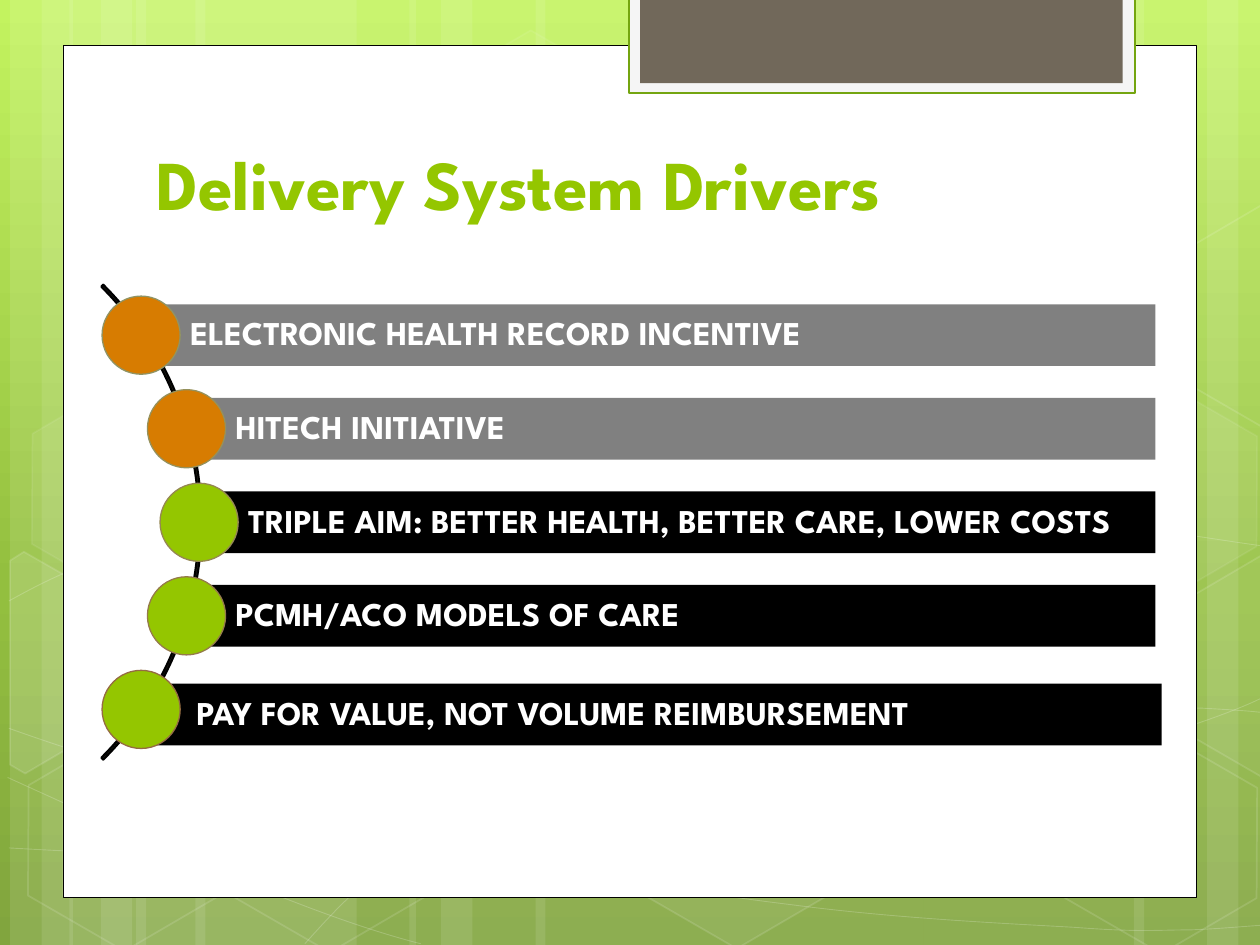
from collections import namedtuple
from copy import deepcopy
from dataclasses import dataclass

from lxml.etree import SubElement
from pptx import Presentation
from pptx.dml.color import RGBColor
from pptx.enum.shapes import MSO_SHAPE as Shape
from pptx.enum.text import MSO_ANCHOR as Anchor, PP_ALIGN as Align
from pptx.oxml.ns import qn
from pptx.util import Inches, Pt

Box = namedtuple("Box", "left top width height")


@dataclass(frozen=True)
class Theme:
    font: str = "League Spartan"
    title_size: int = 40
    label_size: int = 19
    green: str = "94C600"
    orange: str = "D77C01"
    gray: str = "808080"
    black: str = "000000"
    white: str = "FFFFFF"
    arc: str = "3E3D2D"
    tab: str = "71685A"
    tab_frame: str = "F5F5F5"
    tab_line: str = "74A510"
    backdrop: tuple = ((0, "C3F35F"), (0.62, "93BF3F"), (1, "81A53E"))


THEME = Theme()

# Left edge and width of each translucent vertical stripe
STRIPES = [(1.08, 1.75), (0.08, 0.5), (0.33, 0.83), (1.55, 1.75), (0.55, 0.5), (0.8, 0.83),
           (7.33, 1.75), (9.58, 0.5), (9, 0.83), (4.25, 3.08), (3.25, 0.5), (3.5, 0.83)]

# Each curve is a start point followed by Bezier control points, three to a segment
CURVES = [
    [(0.07, 6.73), (0.61, 6.76), (1.15, 6.79), (1.9, 6.78), (2.65, 6.77), (3.58, 6.75),
     (4.58, 6.65), (5.58, 6.55), (7, 6.36), (7.92, 6.17), (8.83, 5.98), (9.77, 5.68), (10.07, 5.51)],
    [(0.07, 4.77), (0.36, 4.61), (0.65, 4.46), (1.21, 4.31), (1.78, 4.16), (2.59, 3.94),
     (3.47, 3.87), (4.36, 3.8), (5.44, 3.79), (6.54, 3.87), (7.64, 3.95), (9.47, 4.26), (10.07, 4.34)],
    [(0.06, 6.17), (1.27, 6.72), (2.47, 7.27), (3.34, 7.49)],
    [(0.07, 5.78), (0.38, 5.89), (0.7, 6), (1.28, 6.16), (1.86, 6.31), (2.73, 6.56),
     (3.57, 6.73), (4.4, 6.9), (5.45, 7.08), (6.28, 7.18), (7.11, 7.29), (8, 7.33),
     (8.53, 7.36), (9.05, 7.4), (9.19, 7.38), (9.45, 7.38), (9.71, 7.37), (9.89, 7.35), (10.07, 7.34)],
    [(2.42, 7.49), (2.6, 7.29), (2.78, 7.09), (3.02, 6.91), (3.26, 6.73), (3.6, 6.53),
     (3.88, 6.39), (4.16, 6.25), (4.33, 6.19), (4.7, 6.09), (5.06, 5.99), (5.73, 5.85),
     (6.08, 5.78), (6.44, 5.71), (6.49, 5.71), (6.8, 5.69), (7.11, 5.66), (7.6, 5.63),
     (7.94, 5.62), (8.29, 5.61), (8.86, 5.62), (8.86, 5.62), (9.08, 5.62), (9.31, 5.62),
     (9.53, 5.62), (9.71, 5.63), (9.88, 5.64), (9.97, 5.65), (10.06, 5.66), (10.03, 5.65), (10.06, 5.66)],
]

# Left, top, fill opacity (None for no fill) and line opacity
HEXAGONS = [(3.34, 0.36, 4, 8), (4.97, 5.89, 6, 12), (0.11, 5.91, None, 12),
            (0.14, 3.12, 7, 8), (1.74, 5.92, None, 12), (7.53, 4.53, 10, 12),
            (8.34, 5.93, None, 12), (8.34, 3.14, 7, 8)]

# Hexagons cut off by the slide edge: corners and fill opacity
CUT_HEXAGONS = [
    ([(0.08, 4.45), (0.19, 4.38), (0.96, 4.82), (0.95, 5.7), (0.2, 6.14), (0.08, 6.07)], 10),
    ([(9.26, 4.85), (10.01, 4.41), (10.09, 4.46), (10.09, 6.13), (10.02, 6.17), (9.26, 5.73)], 4),
    ([(9.26, 2.07), (10.01, 1.63), (10.1, 1.68), (10.09, 3.35), (10.02, 3.39), (9.26, 2.95)], None),
]

# Label, bar colour, dot colour, dot outline, dot offset, bar nudge right and down
DRIVERS = [
    ("ELECTRONIC HEALTH RECORD INCENTIVE", THEME.gray, THEME.orange, "909465", 0, (0, 0)),
    ("HITECH INITIATIVE", THEME.gray, THEME.orange, "95915C", 0.36, (0, 0)),
    ("TRIPLE AIM: BETTER HEALTH, BETTER CARE, LOWER COSTS",
     THEME.black, THEME.green, "958753", 0.46, (0, 0)),
    ("PCMH/ACO MODELS OF CARE", THEME.black, THEME.green, "957A4B", 0.36, (0, 0)),
    ("PAY FOR VALUE, NOT VOLUME REIMBURSEMENT",
     THEME.black, THEME.green, "956B43", 0, (0.05, 0.04)),
]


def set_opacity(paint, percent):
    color = paint.find(f"{qn('a:solidFill')}/{qn('a:srgbClr')}")
    SubElement(color, qn("a:alpha")).set("val", str(percent * 1000))


def paint_shape(shape, fill=None, line=None, width=1, fill_opacity=100, line_opacity=100):
    """Give a shape its fill and outline, either of which may be None."""
    shape.shadow.inherit = False
    properties = shape.element.spPr
    if fill:
        shape.fill.solid()
        shape.fill.fore_color.rgb = RGBColor.from_string(fill)
        if fill_opacity < 100:
            set_opacity(properties, fill_opacity)
    else:
        shape.fill.background()
    if line:
        shape.line.color.rgb = RGBColor.from_string(line)
        shape.line.width = Pt(width)
        if line_opacity < 100:
            set_opacity(properties.find(qn("a:ln")), line_opacity)
    else:
        shape.line.fill.background()


def add_preset(page, kind, box, **paint):
    shape = page.shapes.add_shape(kind, *map(Inches, box))
    paint_shape(shape, **paint)
    return shape


def add_outline(page, box, points, close, **paint):
    corners = [(Inches(box.left + x), Inches(box.top + y)) for x, y in points]
    builder = page.shapes.build_freeform(*corners[0])
    builder.add_line_segments(corners[1:], close=close)
    shape = builder.convert_to_shape()
    paint_shape(shape, **paint)
    return shape


def bend(shape):
    """Turn each three straight segments of an outline into one Bezier segment."""
    lines = list(shape.element.iter(qn("a:lnTo")))
    outline = lines[0].getparent()
    for start in range(0, len(lines), 3):
        curve = SubElement(outline, qn("a:cubicBezTo"))
        for line in lines[start:start + 3]:
            curve.append(line[0])
            outline.remove(line)


def add_backdrop(page, box):
    fill = page.background.fill
    fill.gradient()
    fill.gradient_angle = 270
    first_stop = fill.gradient_stops[0]._gs
    first_stop.addnext(deepcopy(first_stop))
    for stop, (position, color) in zip(fill.gradient_stops, THEME.backdrop):
        stop.position = position
        stop.color.rgb = RGBColor.from_string(color)

    for left, width in STRIPES:
        add_preset(page, Shape.RECTANGLE, Box(box.left + left, box.top, width, box.height),
                   fill=THEME.white, fill_opacity=10)
    for controls in CURVES:
        bend(add_outline(page, box, controls, False,
                         line=THEME.white, width=0.5, line_opacity=20))
    for left, top, opacity, line_opacity in HEXAGONS:
        hexagon = add_preset(page, Shape.HEXAGON, Box(box.left + left, box.top + top, 1.75, 1.52),
                             fill=THEME.white if opacity else None, fill_opacity=opacity or 100,
                             line=THEME.white, line_opacity=line_opacity)
        hexagon.adjustments[0], hexagon.adjustments[1] = 0.285, 1.155
        hexagon.rotation = 30
    for corners, opacity in CUT_HEXAGONS:
        add_outline(page, box, corners, True, fill=THEME.white if opacity else None,
                    fill_opacity=opacity or 100, line=THEME.white, line_opacity=12)


def add_panel(page, box):
    """Place the white panel and the tab hanging over its top edge."""
    add_preset(page, Shape.RECTANGLE, box, fill=THEME.white, line=THEME.black, width=0.5)
    frame = Box(box.left + 4.49, box.top - 0.38, 4.02, 0.76)
    add_preset(page, Shape.RECTANGLE, frame, fill=THEME.tab_frame, line=THEME.tab_line, width=1.25)
    add_preset(page, Shape.RECTANGLE, Box(frame.left + 0.09, frame.top, 3.83, 0.68), fill=THEME.tab)


def move_to_layout(page):
    """Hand the decoration drawn so far to the layout, behind the slide's content."""
    layout_tree = page.slide_layout.shapes.element
    decoration = [shape for shape in page.shapes if not shape.is_placeholder]
    for number, shape in enumerate(decoration, start=100):
        shape.element.nvSpPr.cNvPr.set("id", str(number))
        layout_tree.append(shape.element)


def style_text(para, size, color):
    para.alignment = Align.LEFT
    para.font.name = THEME.font
    para.font.size = Pt(size)
    para.font.bold = True
    para.font.color.rgb = RGBColor.from_string(color)


def add_title(page, box, text):
    title = page.shapes.title
    title.left, title.top, title.width, title.height = map(Inches, box)
    title.text_frame.text = text
    title.text_frame.vertical_anchor = Anchor.BOTTOM
    style_text(title.text_frame.paragraphs[0], THEME.title_size, THEME.green)


def add_drivers(page, box):
    """Place the labelled bars, with their dots strung along an arc."""
    dot_size, bar_height, arc_size = 0.62, 0.49, 5.33
    pitch = (box.height - dot_size) / (len(DRIVERS) - 1)
    arc = add_preset(page, Shape.BLOCK_ARC,
                     Box(box.left - 4.54, box.top + (box.height - arc_size) / 2, arc_size, arc_size),
                     fill=THEME.arc, line=THEME.black, width=1.25)
    for index, value in enumerate((189, 27, 0.004)):
        arc.adjustments[index] = value

    for row, (label, bar_color, dot_color, dot_line, offset, (right, down)) in enumerate(DRIVERS):
        dot = Box(box.left + offset, box.top + row * pitch, dot_size, dot_size)
        bar_left = dot.left + dot_size / 2
        bar = add_preset(page, Shape.RECTANGLE,
                         Box(bar_left + right, dot.top + (dot_size - bar_height) / 2 + down,
                             box.left + box.width - bar_left, bar_height), fill=bar_color)
        frame = bar.text_frame
        frame.word_wrap = True
        frame.vertical_anchor = Anchor.MIDDLE
        frame.margin_left = Inches(0.39)
        frame.margin_top = frame.margin_right = frame.margin_bottom = Inches(0.05)
        frame.text = label
        frame.paragraphs[0].line_spacing = 0.9
        style_text(frame.paragraphs[0], THEME.label_size, THEME.white)
        add_preset(page, Shape.OVAL, dot, fill=dot_color, line=dot_line, width=0.75)


def main():
    deck = Presentation()
    deck.slide_width, deck.slide_height = Inches(10), Inches(7.5)
    page = deck.slides.add_slide(deck.slide_layouts.get_by_name("Title Only"))
    add_backdrop(page, Box(0, 0, 10, 7.5))
    add_panel(page, Box(0.5, 0.36, 9, 6.76))
    move_to_layout(page)
    add_title(page, Box(1.14, 0.58, 7.68, 1.25), "Delivery System Drivers")
    add_drivers(page, Box(0.81, 2.35, 8.36, 3.59))
    deck.save("out.pptx")


if __name__ == "__main__":
    main()
